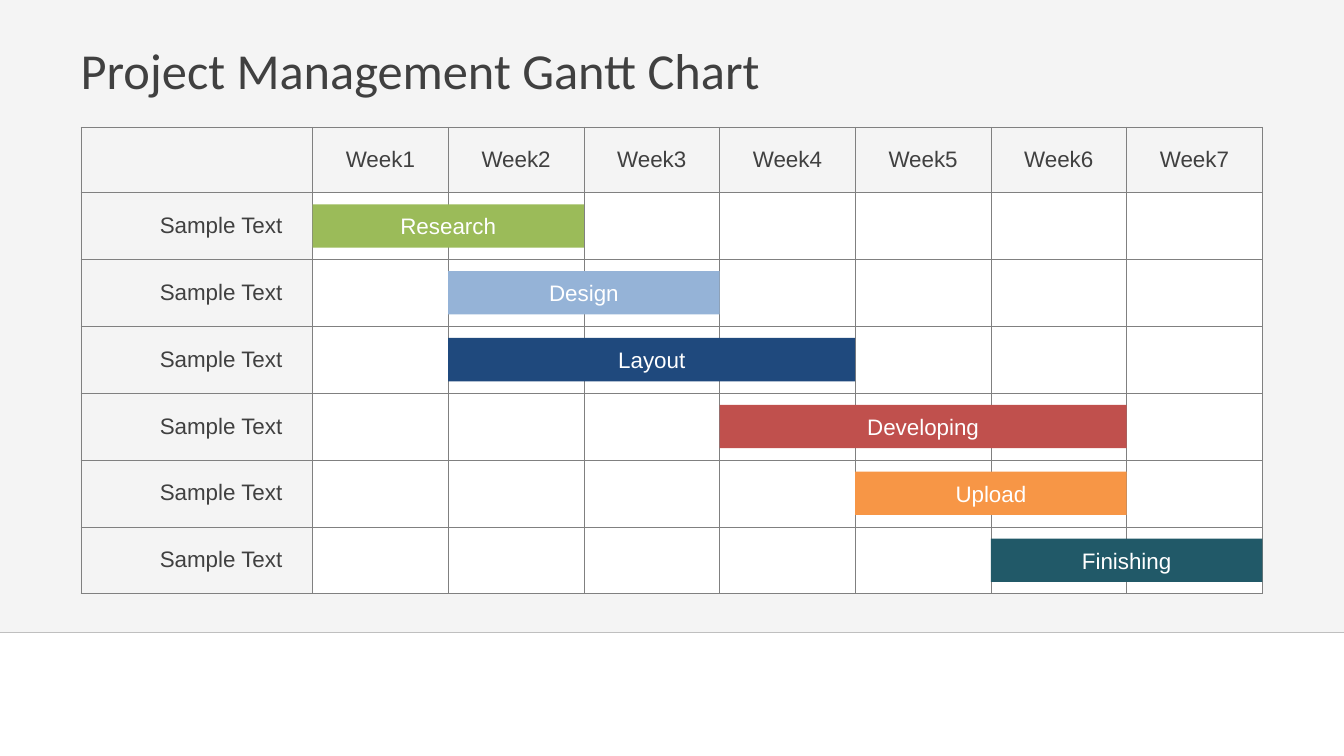
from lxml.etree import SubElement
from pptx import Presentation
from pptx.dml.color import RGBColor as RGB
from pptx.enum.shapes import MSO_CONNECTOR as CONN, MSO_SHAPE as SHAPE
from pptx.enum.text import MSO_ANCHOR as ANCHOR, PP_ALIGN as ALIGN
from pptx.oxml.ns import qn
from pptx.util import Inches, Pt

COLORS = {
    "text": "404040", "white": "FFFFFF", "band": "D9D9D9",
    "rule": "BFBFBF", "grid": "808080",
    "green": "9BBB59", "sky": "95B3D7", "navy": "1F497D",
    "red": "C0504D", "orange": "F79646", "teal": "215968",
}
TASKS = [
    ("Research", 1, 2, "green"),
    ("Design", 2, 2, "sky"),
    ("Layout", 2, 3, "navy"),
    ("Developing", 4, 3, "red"),
    ("Upload", 5, 2, "orange"),
    ("Finishing", 6, 2, "teal"),
]
WEEKS = 7
LEFT, TOP, WIDTH, HEIGHT = 0.8, 1.26, 11.72, 4.63
LABEL_W, HEADER_H, BAR_H = 2.3, 0.65, 0.43
WEEK_W = (WIDTH - LABEL_W) / WEEKS
ROW_H = (HEIGHT - HEADER_H) / len(TASKS)
BAND_H = 6.27


class Deck:
    font, size = "Arial", 16

    def __init__(self, prs):
        self.slide = prs.slides.add_slide(prs.slide_layouts[6])

    def rgb(self, color):
        return RGB.from_string(COLORS[color])

    def add_text(self, tf, text, color="text", align=ALIGN.CENTER, font=None, size=None):
        p = tf.paragraphs[0]
        p.alignment = align
        r = p.add_run()
        r.text = text
        r.font.name = font or self.font
        r.font.size = Pt(size or self.size)
        r.font.color.rgb = self.rgb(color)

    def rect(self, x, y, w, h, color, alpha=None, text=None):
        sp = self.slide.shapes.add_shape(
            SHAPE.RECTANGLE, Inches(x), Inches(y), Inches(w), Inches(h))
        sp.shadow.inherit = False
        sp.fill.solid()
        sp.fill.fore_color.rgb = self.rgb(color)
        sp.line.fill.background()
        if alpha:
            clr = sp._element.spPr.find(".//" + qn("a:srgbClr"))
            SubElement(clr, qn("a:alpha"), val=str(alpha * 1000))
        if text:
            sp.text_frame.vertical_anchor = ANCHOR.MIDDLE
            self.add_text(sp.text_frame, text, "white")

    def title(self, x, y, w, h, text):
        tf = self.slide.shapes.add_textbox(
            Inches(x), Inches(y), Inches(w), Inches(h)).text_frame
        tf.word_wrap = True
        tf.vertical_anchor = ANCHOR.MIDDLE
        tf.margin_left = tf.margin_right = Inches(0.13)
        tf.margin_top = tf.margin_bottom = Inches(0.07)
        self.add_text(tf, text, align=ALIGN.LEFT, font="Calibri", size=36)

    def line(self, x1, y1, x2, y2, color):
        cx = self.slide.shapes.add_connector(
            CONN.STRAIGHT, Inches(x1), Inches(y1), Inches(x2), Inches(y2))
        cx.line.color.rgb = self.rgb(color)
        cx.line.width = Pt(0.25)
        SubElement(cx._element.spPr, qn("a:effectLst"))

    def cell(self, cell, text=None, fill=None, align=ALIGN.CENTER):
        cell.vertical_anchor = ANCHOR.MIDDLE
        tcPr = cell._tc.get_or_add_tcPr()
        for side in ("lnL", "lnR", "lnT", "lnB"):
            ln = SubElement(tcPr, qn("a:" + side), w=str(Pt(0.25)))
            solid = SubElement(ln, qn("a:solidFill"))
            SubElement(solid, qn("a:srgbClr"), val=COLORS["grid"])
        if fill:
            cell.fill.solid()
            cell.fill.fore_color.rgb = self.rgb(fill)
        else:
            cell.fill.background()
        if align == ALIGN.RIGHT:
            cell.margin_left, cell.margin_right = Inches(0.2), Inches(0.3)
        if text:
            self.add_text(cell.text_frame, text, align=align)

    def grid(self):
        table = self.slide.shapes.add_table(
            len(TASKS) + 1, WEEKS + 1, Inches(LEFT), Inches(TOP),
            Inches(WIDTH), Inches(HEIGHT)).table
        table.first_row = table.horz_banding = False
        for i, col in enumerate(table.columns):
            col.width = Inches(WEEK_W if i else LABEL_W)
        for i, row in enumerate(table.rows):
            row.height = Inches(ROW_H if i else HEADER_H)
            for j, cell in enumerate(row.cells):
                if i and j:
                    self.cell(cell, fill="white")
                elif i:
                    self.cell(cell, "Sample Text", align=ALIGN.RIGHT)
                else:
                    self.cell(cell, f"Week{j}" if j else None)

    def bar(self, row, name, start, weeks, color):
        x = LEFT + LABEL_W + (start - 1) * WEEK_W
        y = TOP + HEADER_H + row * ROW_H + (ROW_H - BAR_H) / 2
        self.rect(x, y, weeks * WEEK_W, BAR_H, color, text=name)


def main():
    prs = Presentation()
    prs.slide_width, prs.slide_height = Inches(13.33), Inches(7.5)
    deck = Deck(prs)
    deck.rect(0, 0, 13.33, BAND_H, "band", alpha=28)
    deck.title(0.67, 0.3, 12, 0.78, "Project Management Gantt Chart")
    deck.line(0, BAND_H, 13.33, BAND_H, "rule")
    deck.grid()
    for row, task in enumerate(TASKS):
        deck.bar(row, *task)
    prs.save("out.pptx")


if __name__ == "__main__":
    main()
